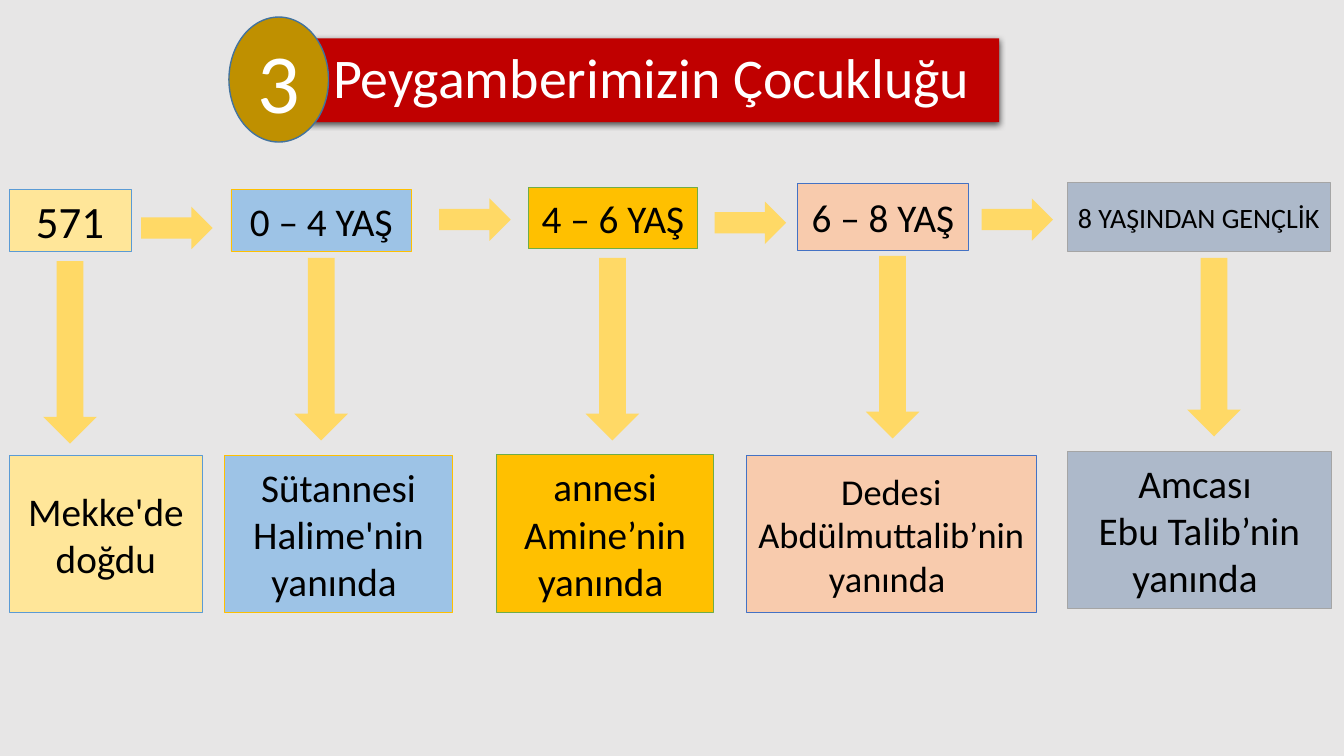
from lxml import etree
from pptx import Presentation
from pptx.dml.color import RGBColor
from pptx.enum import shapes, text
from pptx.oxml import ns
from pptx.util import Cm, Pt

KIND = shapes.MSO_SHAPE


def paint(item, color):
    item.solid()
    item.fore_color.rgb = RGBColor.from_string(color)


def draw(kind, place, fill, line=None, lines=(), size=28, ink="000000", width=0.5):
    shape = slide.shapes.add_shape(kind, *[Cm(n) for n in place])
    shape.shadow.inherit = False
    paint(shape.fill, fill)
    if line:
        paint(shape.line.fill, line)
        shape.line.width = Pt(width)
    else:
        shape.line.fill.background()
    frame = shape.text_frame
    frame.word_wrap = True
    frame.vertical_anchor = text.MSO_ANCHOR.MIDDLE
    for i, words in enumerate(lines):
        para = frame.add_paragraph() if i else frame.paragraphs[0]
        para.alignment = text.PP_ALIGN.CENTER
        run = para.add_run()
        run.text = words
        run.font.name = "Calibri"
        run.font.size = Pt(size)
        paint(run.font.fill, ink)


deck = Presentation()
deck.slide_width, deck.slide_height = Cm(33.87), Cm(19.05)
slide = deck.slides.add_slide(deck.slide_layouts[5])
paint(slide.background.fill, "E7E6E6")

title = slide.shapes.title
title.left, title.top, title.width, title.height = Cm(7.65), Cm(0.97), Cm(17.53), Cm(2.11)
paint(title.fill, "C00000")
frame = title.text_frame
frame.auto_size = text.MSO_AUTO_SIZE.NONE
frame.word_wrap = True
frame.vertical_anchor = text.MSO_ANCHOR.MIDDLE
para = frame.paragraphs[0]
para.alignment = text.PP_ALIGN.CENTER
para.line_spacing = 0.9
run = para.add_run()
run.text = "Peygamberimizin Çocukluğu"
run.font.name = "Calibri"
run.font.size = Pt(40)
paint(run.font.fill, "FFFFFF")

effects = etree.SubElement(title._element.spPr, ns.qn("a:effectLst"))
shadow = etree.SubElement(effects, ns.qn("a:outerShdw"), blurRad=str(Pt(4.5)),
                          dist=str(Pt(1.5)), dir="5400000", rotWithShape="0")
black = etree.SubElement(shadow, ns.qn("a:srgbClr"), val="000000")
etree.SubElement(black, ns.qn("a:alpha"), val="63000")

draw(KIND.OVAL, (5.77, 0.43, 2.51, 3.15), "BF9000", "43739E", ["3"], 60, "FFFFFF", 1)

# age, its size and place, arrow place, event, its size and place, fill, line
stages = [
    ("571", 32, (0.23, 4.78, 3.07, 1.55), (1.09, 6.58, 1.35, 4.6),
     ["Mekke'de doğdu"], 28, (0.23, 11.48, 4.88, 3.96), "FFE699", "5B9BD5"),
    ("0 – 4 YAŞ", 28, (5.82, 4.78, 4.55, 1.55), (7.42, 6.5, 1.35, 4.6),
     ["Sütannesi Halime'nin yanında "], 28, (5.66, 11.48, 5.74, 3.96), "9DC3E6", "FFC000"),
    ("4 – 6 YAŞ", 28, (13.31, 4.72, 4.27, 1.55), (14.76, 6.5, 1.35, 4.6),
     ["annesi Amine’nin yanında "], 28, (12.52, 11.46, 5.46, 3.96), "FFC000", "70AD47"),
    ("6 – 8 YAŞ", 28, (20.09, 4.62, 4.32, 1.68), (21.82, 6.45, 1.35, 4.6),
     ["Dedesi Abdülmuttalib’nin yanında "], 26, (18.82, 11.48, 7.29, 3.96), "F8CBAD", "4472C4"),
    ("8 YAŞINDAN GENÇLİK", 20, (26.9, 4.6, 6.63, 1.73), (29.92, 6.5, 1.35, 4.5),
     ["Amcası ", "Ebu Talib’nin yanında "], 28, (26.9, 11.38, 6.65, 3.96), "ADB9CA", "A5A5A5"),
]
for age, large, top, arrow, event, size, base, fill, line in stages:
    draw(KIND.RECTANGLE, top, fill, line, [age], large)
    draw(KIND.DOWN_ARROW, arrow, "FFD966")
    draw(KIND.RECTANGLE, base, fill, line, event, size)

for left, top in [(3.56, 5.21), (11.07, 5), (18.01, 5.08), (24.74, 5)]:
    draw(KIND.RIGHT_ARROW, (left, top, 1.8, 1.07), "FFD966")

deck.save("out.pptx")
